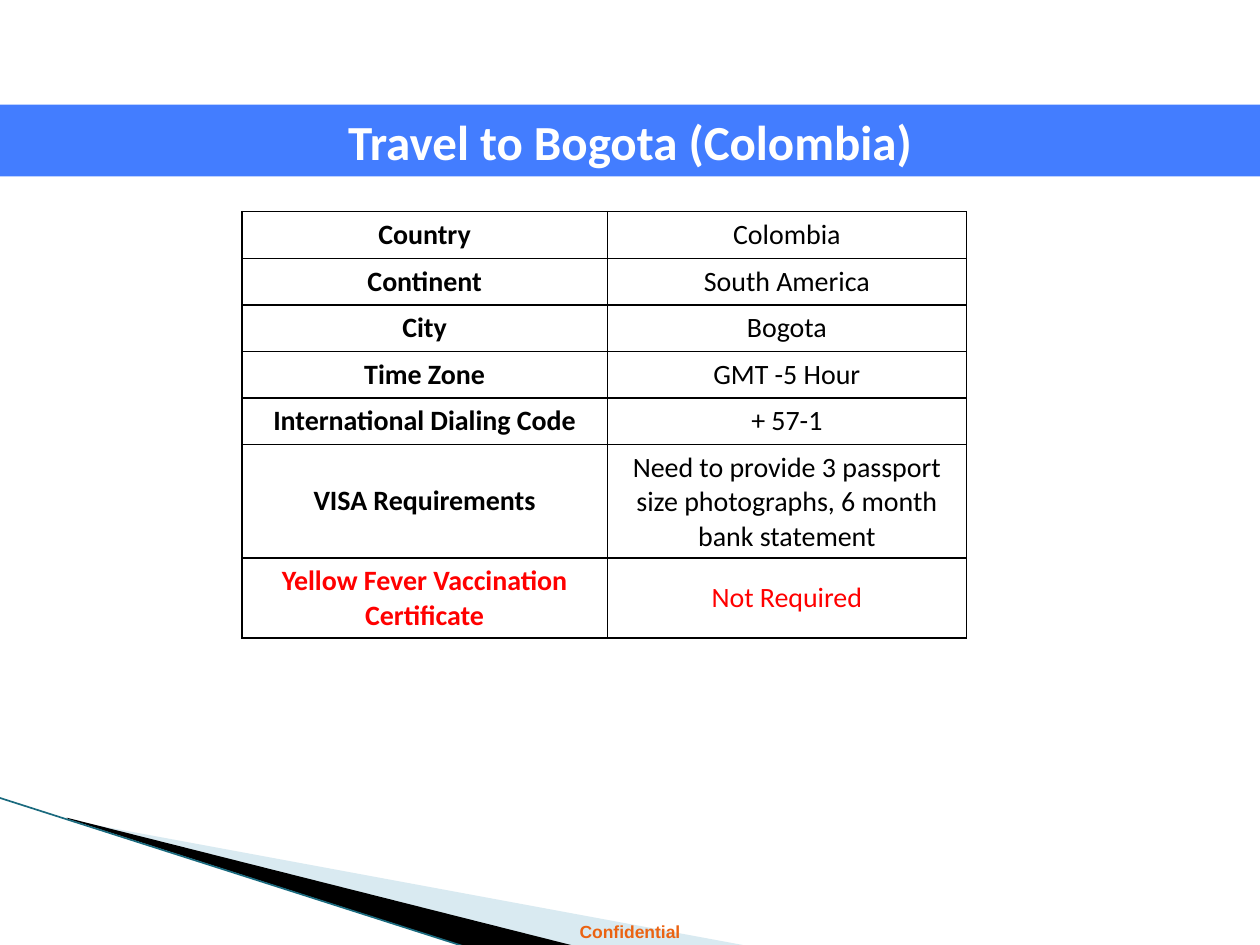
from lxml.etree import SubElement
from pptx import Presentation
from pptx.dml.color import RGBColor
from pptx.enum.shapes import MSO_CONNECTOR, MSO_SHAPE
from pptx.enum.text import MSO_ANCHOR, PP_ALIGN
from pptx.oxml.ns import qn
from pptx.util import Inches, Pt

BLACK = RGBColor(0x00, 0x00, 0x00)
WHITE = RGBColor(0xFF, 0xFF, 0xFF)
RED = RGBColor(0xFF, 0x00, 0x00)
BLUE = RGBColor(0x43, 0x7D, 0xFF)
ORANGE = RGBColor(0xEB, 0x63, 0x12)
PALE_BLUE = RGBColor(0xA0, 0xCB, 0xDC)
TEAL = RGBColor(0x1A, 0x6A, 0x7E)


def write(tf, text, size, font, color, bold):
    tf.word_wrap = True
    tf.vertical_anchor = MSO_ANCHOR.MIDDLE
    p = tf.paragraphs[0]
    p.alignment = PP_ALIGN.CENTER
    r = p.add_run()
    r.text = text
    r.font.size = Pt(size)
    r.font.name = font
    r.font.color.rgb = color
    r.font.bold = bold


def add_border(cell):
    tc_pr = cell._tc.get_or_add_tcPr()
    for i, side in enumerate(("a:lnL", "a:lnR", "a:lnT", "a:lnB")):
        ln = tc_pr.makeelement(qn(side), {"w": str(Pt(1))})
        fill = SubElement(ln, qn("a:solidFill"))
        SubElement(fill, qn("a:srgbClr"), val=str(BLACK))
        tc_pr.insert(i, ln)


prs = Presentation()
prs.slide_width, prs.slide_height = Inches(10), Inches(7.5)
s = prs.slides.add_slide(prs.slide_layouts[6])

# Corner wedges
wedges = [
    (PALE_BLUE, 40, [(0.55, 6.51), (5.95, 7.51), (4.56, 7.51), (0.55, 6.5)]),
    (BLACK, 100, [(0.53, 6.49), (4.57, 7.51), (3.72, 7.52), (0.54, 6.5)]),
]
for color, opacity, points in wedges:
    corners = [(Inches(x), Inches(y)) for x, y in points]
    fb = s.shapes.build_freeform(*corners[0])
    fb.add_line_segments(corners[1:], close=True)
    sp = fb.convert_to_shape()
    sp.shadow.inherit = False
    sp.fill.solid()
    sp.fill.fore_color.rgb = color
    sp.line.fill.background()
    if opacity < 100:
        clr = sp._element.spPr.find(qn("a:solidFill"))[0]
        SubElement(clr, qn("a:alpha"), val=str(opacity * 1000))

# Diagonal edge line
edge = s.shapes.add_connector(MSO_CONNECTOR.STRAIGHT, Inches(-0.01), Inches(6.33),
                              Inches(3.71), Inches(7.52))
edge.line.color.rgb = TEAL
edge.line.width = Pt(0.95)
SubElement(edge._element.spPr, qn("a:effectLst"))

# Footer
footer = s.shapes.add_textbox(0, Inches(7.26), Inches(10), Inches(0.27))
write(footer.text_frame, "Confidential", 10, "Arial", ORANGE, True)

# Title band
band = s.shapes.add_shape(MSO_SHAPE.RECTANGLE, 0, Inches(0.83), Inches(10), Inches(0.57))
band.shadow.inherit = False
band.fill.solid()
band.fill.fore_color.rgb = BLUE
band.line.fill.background()
write(band.text_frame, "Travel to Bogota (Colombia)", 28, "Calibri", WHITE, True)

# Travel facts: label, value, row height, colour
facts = [
    ("Country", "Colombia", 0.37, BLACK),
    ("Continent", "South America", 0.37, BLACK),
    ("City", "Bogota", 0.37, BLACK),
    ("Time Zone", "GMT -5 Hour", 0.37, BLACK),
    ("International Dialing Code", "+ 57-1", 0.37, BLACK),
    ("VISA Requirements",
     "Need to provide 3 passport size photographs, 6 month bank statement", 0.9, BLACK),
    ("Yellow Fever Vaccination Certificate", "Not Required", 0.63, RED),
]
table = s.shapes.add_table(len(facts), 2, Inches(1.92), Inches(1.68),
                           Inches(5.75), Inches(3.37)).table
table.first_row = table.horz_banding = False
table.columns[0].width = Inches(2.9)
table.columns[1].width = Inches(2.85)
for row, (label, value, height, color) in zip(table.rows, facts):
    row.height = Inches(height)
    for cell, text, bold in zip(row.cells, (label, value), (True, False)):
        cell.fill.background()
        cell.vertical_anchor = MSO_ANCHOR.MIDDLE
        write(cell.text_frame, text, 16, "Calibri", color, bold)
        add_border(cell)

prs.save("out.pptx")
